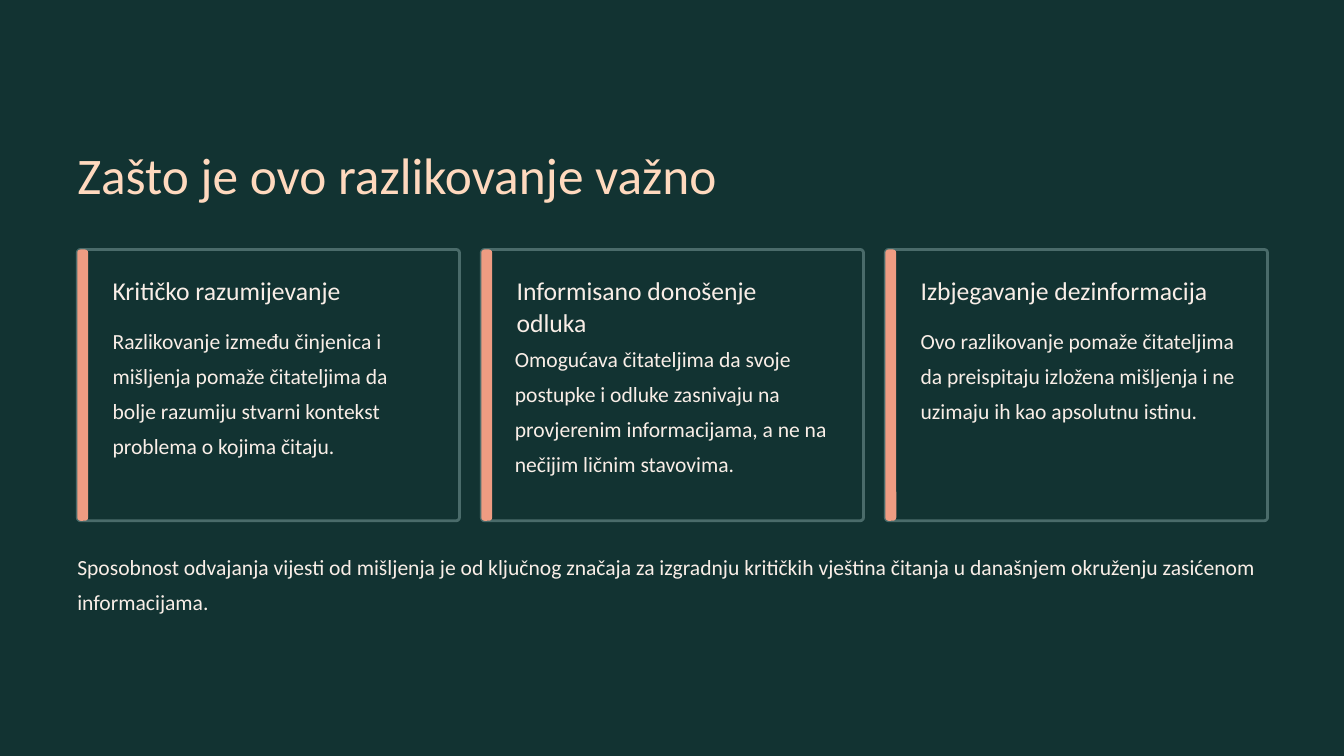
import pptx
import pptx.dml.color
import pptx.enum.shapes
import pptx.enum.text
import pptx.util
from dataclasses import dataclass

Inches = pptx.util.Inches
Pt = pptx.util.Pt
RGB = pptx.dml.color.RGBColor.from_string


@dataclass(frozen=True)
class Theme:
    font: str = "Calibri"
    background: str = "123332"
    border: str = "4A6B6A"
    accent: str = "EF9C82"
    title: str = "FFD9BE"
    text: str = "F9EEE7"
    # Type size and line spacing, in points
    title_type: tuple = (44, 55)
    heading_type: tuple = (22, 27.5)
    body_type: tuple = (18.5, 30)


THEME = Theme()

# Page and card grid, in inches
MARGIN = 0.92
CARD_TOP, CARD_W, CARD_H = 2.97, 4.55, 3.23
CARD_STEP = 4.81
BAR_W = 0.13
TEXT_INSET, TEXT_W = 0.42, 3.82

# Heading lines, body text, body left inset, body top, body height
CARDS = [
    (["Kritičko razumijevanje"],
     "Razlikovanje između činjenica i mišljenja pomaže čitateljima da bolje "
     "razumiju stvarni kontekst problema o kojima čitaju.", TEXT_INSET, 3.8, 2.09),
    (["Informisano donošenje", "odluka"],
     "Omogućava čitateljima da svoje postupke i odluke zasnivaju na provjerenim "
     "informacijama, a ne na nečijim ličnim stavovima.", 0.4, 4.01, 1.68),
    (["Izbjegavanje dezinformacija"],
     "Ovo razlikovanje pomaže čitateljima da preispitaju izložena mišljenja i ne "
     "uzimaju ih kao apsolutnu istinu.", TEXT_INSET, 3.8, 1.68),
]
SUMMARY = ("Sposobnost odvajanja vijesti od mišljenja je od ključnog značaja za izgradnju "
           "kritičkih vještina čitanja u današnjem okruženju zasićenom informacijama.")


def write_lines(tf, lines, type_style, color, wrap=True):
    size, spacing = type_style
    tf.margin_left = tf.margin_top = tf.margin_right = tf.margin_bottom = 0
    tf.auto_size = pptx.enum.text.MSO_AUTO_SIZE.NONE
    tf.vertical_anchor = pptx.enum.text.MSO_ANCHOR.TOP
    tf.word_wrap = wrap
    for i, line in enumerate(lines):
        p = tf.paragraphs[0] if i == 0 else tf.add_paragraph()
        p.alignment = pptx.enum.text.PP_ALIGN.LEFT
        p.line_spacing = Pt(spacing)
        p.space_before = Pt(0)
        r = p.add_run()
        r.text = line
        r.font.name = THEME.font
        r.font.size = Pt(size)
        r.font.color.rgb = RGB(color)


def add_title(s, text):
    sp = s.shapes.title
    sp.left, sp.top = Inches(MARGIN), Inches(1.67)
    sp.width, sp.height = Inches(9.11), Inches(0.77)
    write_lines(sp.text_frame, [text], THEME.title_type, THEME.title, wrap=False)


def add_text(s, x, y, w, h, lines, type_style, wrap=True):
    sp = s.shapes.add_textbox(Inches(x), Inches(y), Inches(w), Inches(h))
    write_lines(sp.text_frame, lines, type_style, THEME.text, wrap)


def add_panel(s, x, w, corner, fill, border=None):
    sp = s.shapes.add_shape(pptx.enum.shapes.MSO_SHAPE.ROUNDED_RECTANGLE,
                            Inches(x), Inches(CARD_TOP), Inches(w), Inches(CARD_H))
    sp.adjustments[0] = corner
    sp.shadow.inherit = False
    sp.fill.solid()
    sp.fill.fore_color.rgb = RGB(fill)
    if border:
        sp.line.color.rgb = RGB(border)
        sp.line.width = Pt(2.4)
    else:
        sp.line.fill.background()


def add_card(s, x, heading, body, body_inset, body_top, body_h):
    add_panel(s, x, CARD_W, 0.012, THEME.background, THEME.border)
    add_panel(s, x, BAR_W, 0.295, THEME.accent)
    add_text(s, x + TEXT_INSET, 3.26, TEXT_W, 0.38, heading, THEME.heading_type, wrap=False)
    add_text(s, x + body_inset, body_top, TEXT_W, body_h, [body], THEME.body_type)


def main():
    prs = pptx.Presentation()
    prs.slide_width, prs.slide_height = Inches(16), Inches(9)
    s = prs.slides.add_slide(prs.slide_layouts[5])

    # Background and title
    s.background.fill.solid()
    s.background.fill.fore_color.rgb = RGB(THEME.background)
    add_title(s, "Zašto je ovo razlikovanje važno")

    # Three reason cards
    for i, card in enumerate(CARDS):
        add_card(s, MARGIN + i * CARD_STEP, *card)

    # Closing summary
    add_text(s, MARGIN, 6.49, 14.17, 0.84, [SUMMARY], THEME.body_type)

    prs.save("out.pptx")


if __name__ == "__main__":
    main()
